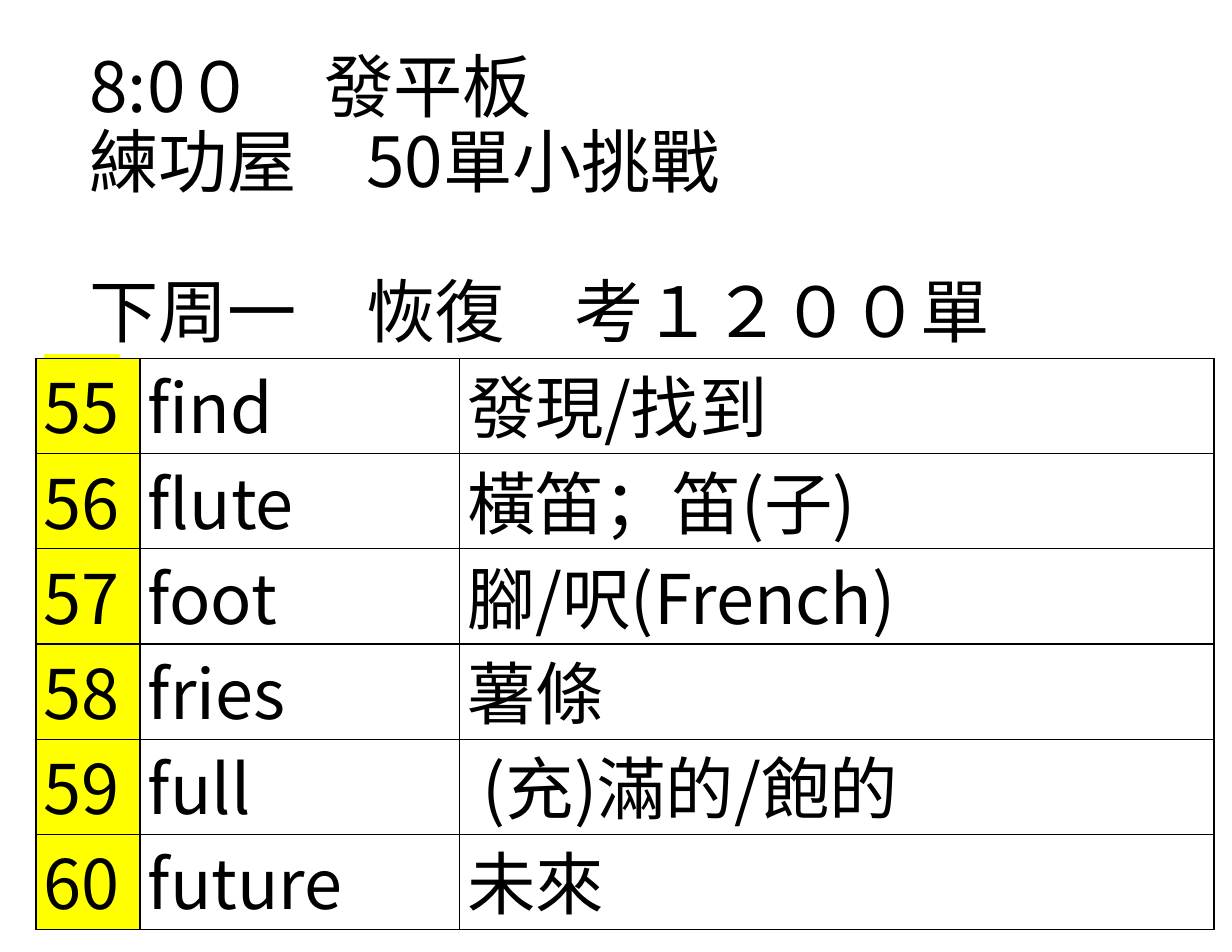
from itertools import groupby

from lxml.etree import SubElement
from pptx import Presentation
from pptx.dml.color import RGBColor
from pptx.enum.text import MSO_ANCHOR as Anchor, PP_ALIGN as Align
from pptx.oxml import parse_xml
from pptx.oxml.ns import nsdecls, qn
from pptx.util import Inches, Pt

# Content
NOTICE = ["8:0０\u3000發平板", "練功屋\u300050單小挑戰", "下周一\u3000恢復\u3000考１２００單"]
FIRST_NUMBER = 55
WORDS = [
    ("find", "發現/找到"),
    ("flute", "橫笛；笛(子)"),
    ("foot", "腳/呎(French)"),
    ("fries", "薯條"),
    ("full", " (充)滿的/飽的"),
    ("future", "未來"),
]
COLOURS = {"ink": "000000", "mark": "FFFF00"}
TITLE_FONT, LATIN_FONT, CHINESE_FONT = "Noto Sans CJK TC", "Noto Sans CJK SC", "Calibri"
COLUMNS = [0.93, 2.85, 6.74]
ROW_HEIGHT = 0.85
TITLE_PITCH = 48.2


def add_span(para, text, size, font, east_font=TITLE_FONT, highlight=None):
    span = para.add_run()
    span.text = text
    span.font.size = Pt(size)
    span.font.color.rgb = RGBColor.from_string(COLOURS["ink"])
    span.font.name = font
    props = span.font._element
    SubElement(props, qn("a:ea")).set("typeface", east_font)
    if highlight:
        props.find(qn("a:solidFill")).addnext(parse_xml(
            f'<a:highlight {nsdecls("a")}><a:srgbClr val="{highlight}"/></a:highlight>'))


def add_borders(cell):
    props = cell._tc.get_or_add_tcPr()
    for index, side in enumerate("LRTB"):
        props.insert(index, parse_xml(
            f'<a:ln{side} {nsdecls("a")} w="{Pt(1)}"><a:solidFill>'
            f'<a:srgbClr val="{COLOURS["ink"]}"/></a:solidFill></a:ln{side}>'))


def fill_cell(cell, text, highlight=None):
    cell.margin_left = cell.margin_right = Inches(0.07)
    cell.margin_top = cell.margin_bottom = 0
    cell.vertical_anchor = Anchor.BOTTOM
    if highlight:
        cell.fill.solid()
        cell.fill.fore_color.rgb = RGBColor.from_string(highlight)
    else:
        cell.fill.background()
    add_borders(cell)
    para = cell.text_frame.paragraphs[0]
    para.alignment = Align.JUSTIFY
    para.line_spacing = Pt(22)
    # Latin and Chinese parts have their own fonts
    for is_latin, letters in groupby(text, str.isascii):
        add_span(para, "".join(letters), 44, LATIN_FONT if is_latin else CHINESE_FONT,
                 highlight=highlight)


deck = Presentation()
deck.slide_width, deck.slide_height = Inches(11), Inches(8.5)
page = deck.slides.add_slide(deck.slide_layouts[6])

# Notice above the table
box = page.shapes.add_textbox(Inches(0.7), Inches(0.37), Inches(10.52), Inches(4.86))
frame = box.text_frame
frame.word_wrap = True
frame.vertical_anchor = Anchor.TOP
frame.margin_top = Inches(0.09)
for index, line in enumerate(NOTICE):
    para = frame.paragraphs[0] if index == 0 else frame.add_paragraph()
    para.line_spacing = Pt(TITLE_PITCH)
    if index == len(NOTICE) - 1:
        para.space_before = Pt(TITLE_PITCH)
    add_span(para, line, 44.5, TITLE_FONT)

# Word table
table = page.shapes.add_table(
    len(WORDS), len(COLUMNS), Inches(0.32), Inches(3.2),
    Inches(sum(COLUMNS)), Inches(ROW_HEIGHT * len(WORDS))).table
table.first_row = table.horz_banding = False
for column, width in zip(table.columns, COLUMNS):
    column.width = Inches(width)
for index, (word, meaning) in enumerate(WORDS):
    table.rows[index].height = Inches(ROW_HEIGHT)
    fill_cell(table.cell(index, 0), str(FIRST_NUMBER + index), COLOURS["mark"])
    fill_cell(table.cell(index, 1), word)
    fill_cell(table.cell(index, 2), meaning)

deck.save("out.pptx")
